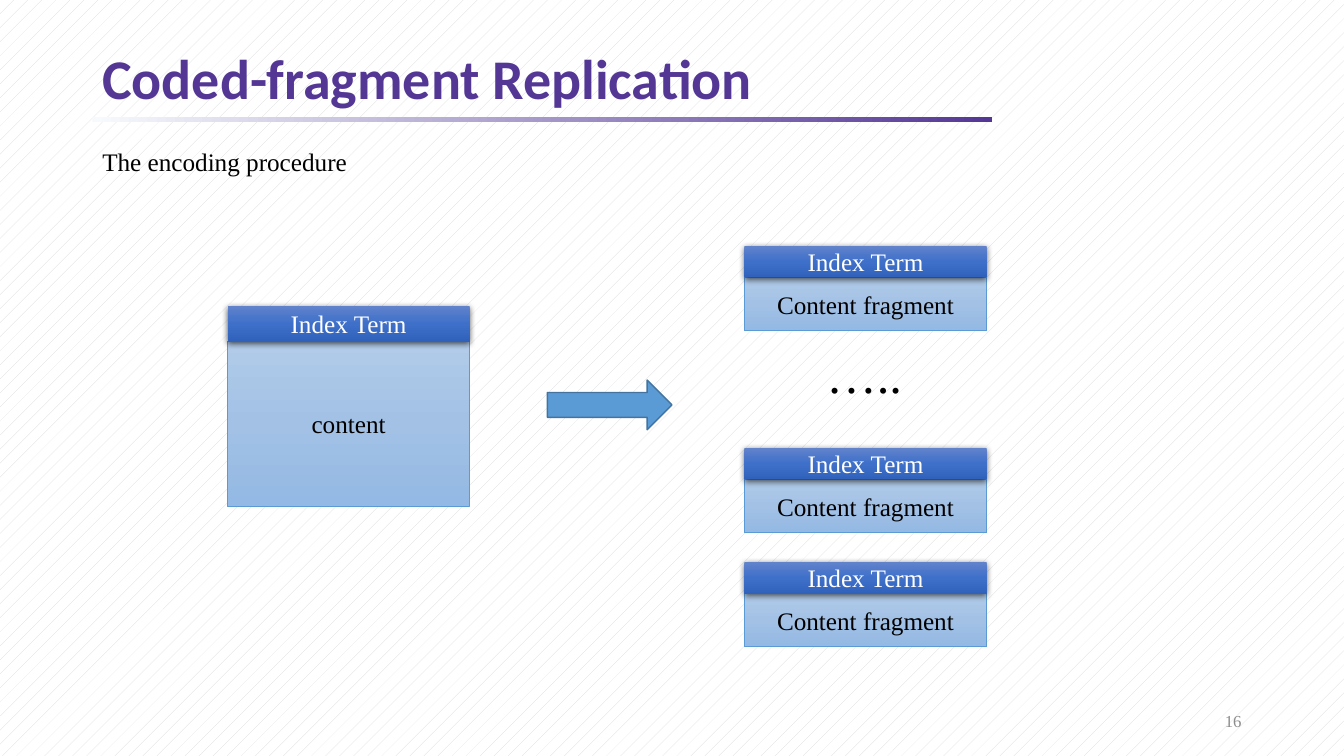
from copy import deepcopy

from lxml import etree
from pptx import Presentation
from pptx import util as u
from pptx.dml.color import RGBColor
from pptx.enum import dml, shapes, text
from pptx.oxml import ns

WHITE = RGBColor(0xFF, 0xFF, 0xFF)
BLACK = RGBColor(0x00, 0x00, 0x00)
HATCH = RGBColor(0xD9, 0xD9, 0xD9)
GREY = RGBColor(0x8C, 0x8C, 0x8C)
PURPLE = RGBColor(0x54, 0x37, 0x95)
PALE = RGBColor(0xF7, 0xFA, 0xFD)
ARROW_FILL = RGBColor(0x5B, 0x9B, 0xD5)
ARROW_EDGE = RGBColor(0x43, 0x73, 0x9E)
LIGHT_BLUES = [RGBColor(0xB1, 0xCB, 0xE9), RGBColor(0xA3, 0xC1, 0xE5), RGBColor(0x93, 0xB9, 0xE4)]
DEEP_BLUES = [RGBColor(0x61, 0x83, 0xCB), RGBColor(0x3E, 0x70, 0xCA), RGBColor(0x30, 0x62, 0xBB)]

BODY = {"name": "Times New Roman", "size": u.Pt(18)}
HEADING = {"name": "Calibri", "size": u.Pt(40), "bold": True}
BLOCK_WIDTH = 173
ALIGN = text.PP_ALIGN
ANCHOR = text.MSO_ANCHOR
SHAPE = shapes.MSO_SHAPE


class Painter:
    """Holds the current slide and the style of its elements."""

    def __init__(self, page):
        self.page = page

    def background(self):
        fill = self.page.background.fill
        fill.patterned()
        fill.pattern = dml.MSO_PATTERN.PERCENT_5
        fill.fore_color.rgb = HATCH
        fill.back_color.rgb = WHITE

    def set_words(self, box, words, color, font, align, anchor, wrap=True, spacing=None):
        frame = box.text_frame
        frame.word_wrap = wrap
        frame.vertical_anchor = anchor
        para = frame.paragraphs[0]
        para.alignment = align
        para.line_spacing = spacing
        span = para.add_run()
        span.text = words
        for name, value in font.items():
            setattr(span.font, name, value)
        span.font.color.rgb = color

    def label(self, place, words, color=BLACK, font=BODY, align=ALIGN.LEFT,
              anchor=ANCHOR.TOP, wrap=False, spacing=None):
        box = self.page.shapes.add_textbox(*map(u.Pt, place))
        self.set_words(box, words, color, font, align, anchor, wrap, spacing)

    def shape(self, kind, place, colors, angle=270, edge=None, edge_width=0.5):
        form = self.page.shapes.add_shape(kind, *map(u.Pt, place))
        form.shadow.inherit = False
        if len(colors) == 1:
            form.fill.solid()
            form.fill.fore_color.rgb = colors[0]
        else:
            self.blend(form, colors, angle)
        if edge is None:
            form.line.fill.background()
        else:
            form.line.color.rgb = edge
            form.line.width = u.Pt(edge_width)
        return form

    def blend(self, form, colors, angle):
        form.fill.gradient()
        form.fill.gradient_angle = angle
        # The default gradient has two stops; a third needs its own element
        if len(colors) == 3:
            stops = form._element.spPr.find(ns.qn("a:gradFill")).find(ns.qn("a:gsLst"))
            stops.insert(1, deepcopy(stops[0]))
        for index, (stop, color) in enumerate(zip(form.fill.gradient_stops, colors)):
            stop.position = index / (len(colors) - 1)
            stop.color.rgb = color

    def drop_shadow(self, form):
        effects = form._element.spPr.find(ns.qn("a:effectLst"))
        shadow = etree.SubElement(effects, ns.qn("a:outerShdw"), blurRad=str(u.Pt(4.5)),
                                  dist=str(u.Pt(1.5)), dir="5400000", algn="ctr", rotWithShape="0")
        color = etree.SubElement(shadow, ns.qn("a:srgbClr"), val=str(BLACK))
        etree.SubElement(color, ns.qn("a:alpha"), val="63000")

    def block(self, left, top, head, body, words):
        """An index term stacked on the content it points to."""
        content = self.shape(SHAPE.RECTANGLE, (left, top + head, BLOCK_WIDTH, body),
                             LIGHT_BLUES, edge=ARROW_FILL)
        self.set_words(content, words, BLACK, BODY, ALIGN.CENTER, ANCHOR.MIDDLE)
        term = self.shape(SHAPE.RECTANGLE, (left, top, BLOCK_WIDTH, head), DEEP_BLUES)
        self.drop_shadow(term)
        self.set_words(term, "Index Term", WHITE, BODY, ALIGN.CENTER, ANCHOR.MIDDLE)


def main():
    deck = Presentation()
    deck.slide_width, deck.slide_height = u.Pt(960), u.Pt(540)
    painter = Painter(deck.slides.add_slide(deck.slide_layouts[6]))
    painter.background()

    # Title, rule and page number
    painter.shape(SHAPE.RECTANGLE, (66, 83.5, 642.5, 4), [PALE, PURPLE], angle=0)
    painter.label((678, 500.5, 216, 28.75), "16", GREY, {**BODY, "size": u.Pt(12)},
                  ALIGN.RIGHT, ANCHOR.MIDDLE, wrap=True)
    painter.label((66, 31, 828, 54), "Coded-fragment Replication", PURPLE, HEADING,
                  anchor=ANCHOR.MIDDLE, wrap=True, spacing=0.9)
    painter.label((66, 101, 196, 29), "The encoding procedure")

    # Whole content, encoded into fragments
    painter.block(162.5, 218.5, 25.5, 117.5, "content")
    painter.shape(SHAPE.RIGHT_ARROW, (391, 271.5, 89, 35.5), [ARROW_FILL],
                  edge=ARROW_EDGE, edge_width=1)
    for top in (175.75, 320, 401.5):
        painter.block(531.75, top, 22.5, 38, "Content fragment")
    painter.label((583.25, 241.25, 69, 51), "…..", font={**BODY, "size": u.Pt(36)})

    deck.save("out.pptx")


if __name__ == "__main__":
    main()
